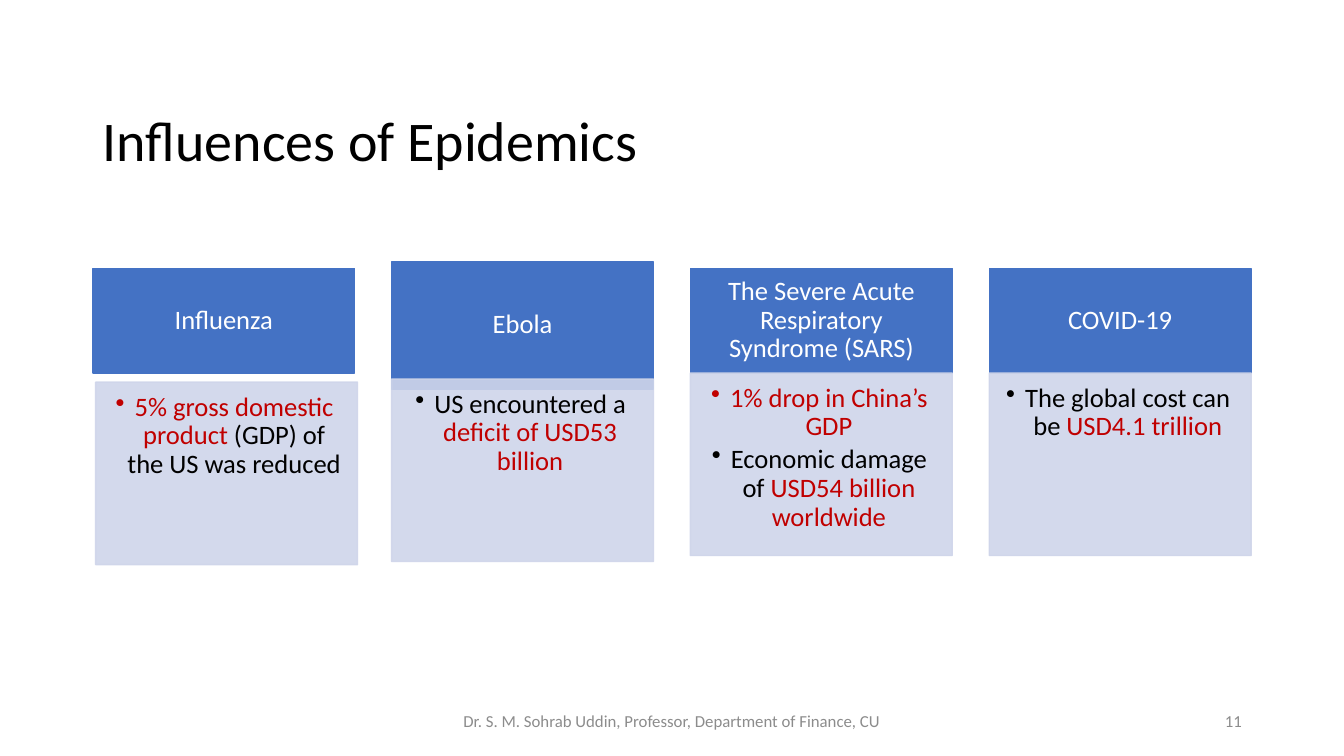
"""Build the slide on the economic influences of epidemics."""
from dataclasses import dataclass

from pptx import Presentation
from pptx.dml.color import RGBColor
from pptx.enum.shapes import MSO_SHAPE
from pptx.enum.text import MSO_ANCHOR, MSO_AUTO_SIZE, PP_ALIGN
from pptx.oxml.ns import qn
from pptx.shapes.autoshape import Shape
from pptx.slide import Slide
from pptx.text.text import TextFrame, _Paragraph
from pptx.util import Cm, Pt
from lxml.etree import SubElement


@dataclass(frozen=True)
class Theme:
    font: str = "Calibri"
    ink: str = "000000"
    loss: str = "C00000"
    header: str = "4472C4"
    header_ink: str = "FFFFFF"
    panel: str = "CFD5EA"
    footer: str = "8C8C8C"
    title_size: int = 40
    body_size: int = 19
    footer_size: int = 12
    panel_opacity: int = 90


@dataclass(frozen=True)
class Phrase:
    text: str
    color: str


@dataclass(frozen=True)
class Epidemic:
    name: str
    effects: list[list[Phrase]]
    header_top: float = 6.76
    header_height: float = 2.64
    panel_top: float = 9.4
    panel_shift: float = 0.0


@dataclass(frozen=True)
class FooterItem:
    text: str
    left: float
    width: float
    align: PP_ALIGN


THEME = Theme()
FIRST_LEFT, PITCH, COLUMN_WIDTH, PANEL_HEIGHT = 2.34, 7.53, 6.6, 4.6

EPIDEMICS = [
    Epidemic("Influenza", [[Phrase("5% gross domestic product ", THEME.loss),
                            Phrase("(GDP) of the US was reduced", THEME.ink)]],
             panel_top=9.63, panel_shift=0.07),
    Epidemic("Ebola", [[Phrase("US encountered a ", THEME.ink),
                        Phrase("deficit of USD53 billion", THEME.loss)]],
             header_top=6.6, header_height=3.2, panel_top=9.55),
    Epidemic("The Severe Acute Respiratory Syndrome (SARS)",
             [[Phrase("1% drop in China’s GDP", THEME.loss)],
              [Phrase("Economic damage of ", THEME.ink),
               Phrase("USD54 billion worldwide", THEME.loss)]]),
    Epidemic("COVID-19", [[Phrase("The global cost can be ", THEME.ink),
                           Phrase("USD4.1 trillion", THEME.loss)]]),
]

FOOTER = [
    FooterItem("11", 23.93, 7.62, PP_ALIGN.RIGHT),
    FooterItem("Dr. S. M. Sohrab Uddin, Professor, Department of Finance, CU",
               11.22, 11.43, PP_ALIGN.CENTER),
]


def add_phrase(paragraph: _Paragraph, phrase: Phrase, size: int) -> None:
    run = paragraph.add_run()
    run.text = phrase.text
    run.font.name = THEME.font
    run.font.size = Pt(size)
    run.font.color.rgb = RGBColor.from_string(phrase.color)


def set_insets(frame: TextFrame, left: float, top: float, right: float, bottom: float) -> None:
    frame.margin_left, frame.margin_top = Cm(left), Cm(top)
    frame.margin_right, frame.margin_bottom = Cm(right), Cm(bottom)


def add_block(slide: Slide, left: float, top: float, height: float, color: str) -> Shape:
    block = slide.shapes.add_shape(MSO_SHAPE.RECTANGLE, Cm(left), Cm(top),
                                   Cm(COLUMN_WIDTH), Cm(height))
    block.shadow.inherit = False
    block.fill.solid()
    block.fill.fore_color.rgb = RGBColor.from_string(color)
    block.line.color.rgb = RGBColor.from_string(color)
    block.line.width = Pt(1)
    block.text_frame.word_wrap = True
    return block


def set_opacity(block: Shape, percent: int) -> None:
    for color in block.element.spPr.iter(qn("a:srgbClr")):
        SubElement(color, qn("a:alpha"), val=str(percent * 1000))


def add_bullet(paragraph: _Paragraph) -> None:
    properties = paragraph._p.get_or_add_pPr()
    properties.set("marL", str(Cm(0.48)))
    properties.set("indent", str(Cm(-0.48)))
    SubElement(properties, qn("a:buChar"), char="•")


def add_title(slide: Slide, text: str) -> None:
    title = slide.shapes.title
    title.left, title.top, title.width, title.height = Cm(2.34), Cm(1.02), Cm(29.21), Cm(3.68)
    frame = title.text_frame
    frame.auto_size = MSO_AUTO_SIZE.NONE
    frame.vertical_anchor = MSO_ANCHOR.BOTTOM
    set_insets(frame, 0.25, 0.13, 0.25, 0.33)
    paragraph = frame.paragraphs[0]
    paragraph.alignment = PP_ALIGN.LEFT
    paragraph.line_spacing = 0.9
    add_phrase(paragraph, Phrase(text, THEME.ink), THEME.title_size)


def add_epidemic(slide: Slide, epidemic: Epidemic, left: float) -> None:
    header = add_block(slide, left, epidemic.header_top, epidemic.header_height, THEME.header)
    header.text_frame.vertical_anchor = MSO_ANCHOR.MIDDLE
    set_insets(header.text_frame, 0.38, 0.2, 0.38, 0.2)
    heading = header.text_frame.paragraphs[0]
    heading.alignment = PP_ALIGN.CENTER
    heading.line_spacing = 0.9
    add_phrase(heading, Phrase(epidemic.name, THEME.header_ink), THEME.body_size)

    panel = add_block(slide, left + epidemic.panel_shift, epidemic.panel_top,
                      PANEL_HEIGHT, THEME.panel)
    set_opacity(panel, THEME.panel_opacity)
    frame = panel.text_frame
    frame.vertical_anchor = MSO_ANCHOR.TOP
    set_insets(frame, 0.28, 0.28, 0.38, 0.43)
    for index, phrases in enumerate(epidemic.effects):
        effect = frame.add_paragraph() if index else frame.paragraphs[0]
        effect.alignment = PP_ALIGN.CENTER
        effect.line_spacing = 0.9
        effect.space_after = Pt(3)
        add_bullet(effect)
        for phrase in phrases:
            add_phrase(effect, phrase, THEME.body_size)


def add_footer_item(slide: Slide, item: FooterItem) -> None:
    box = slide.shapes.add_textbox(Cm(item.left), Cm(17.65), Cm(item.width), Cm(1.01))
    frame = box.text_frame
    frame.word_wrap = True
    frame.vertical_anchor = MSO_ANCHOR.MIDDLE
    frame.paragraphs[0].alignment = item.align
    add_phrase(frame.paragraphs[0], Phrase(item.text, THEME.footer), THEME.footer_size)


def main() -> None:
    presentation = Presentation()
    presentation.slide_width, presentation.slide_height = Cm(33.87), Cm(19.05)
    slide = presentation.slides.add_slide(presentation.slide_layouts.get_by_name("Title Only"))
    add_title(slide, "Influences of Epidemics")
    for column, epidemic in enumerate(EPIDEMICS):
        add_epidemic(slide, epidemic, FIRST_LEFT + column * PITCH)
    for item in FOOTER:
        add_footer_item(slide, item)
    presentation.save("out.pptx")


if __name__ == "__main__":
    main()
